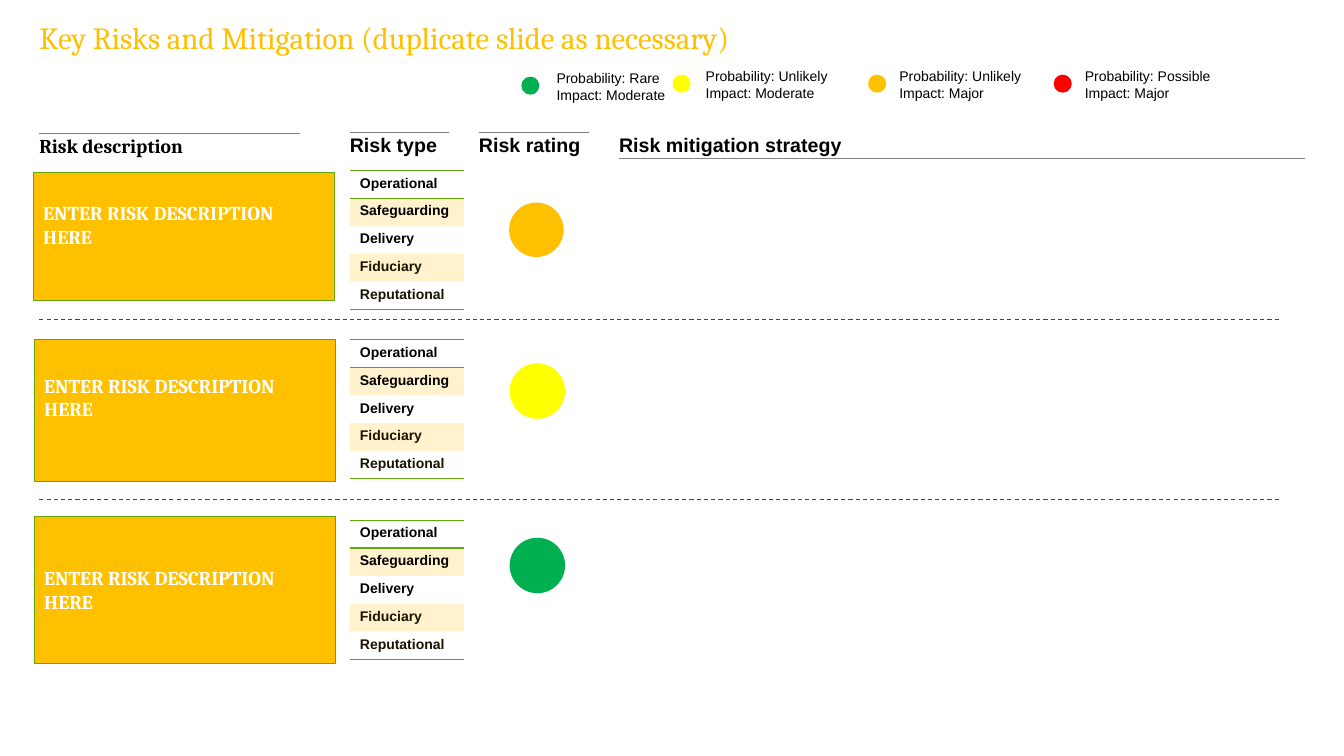
from lxml import etree
from pptx import Presentation
from pptx.dml.color import RGBColor
from pptx.enum.dml import MSO_LINE
from pptx.enum.shapes import MSO_CONNECTOR, MSO_SHAPE
from pptx.enum.text import MSO_ANCHOR, PP_ALIGN
from pptx.oxml.ns import qn
from pptx.util import Emu, Pt

STRAIGHT = MSO_CONNECTOR.STRAIGHT
RECT, OVAL = MSO_SHAPE.RECTANGLE, MSO_SHAPE.OVAL
TOP, MIDDLE, BOTTOM = MSO_ANCHOR.TOP, MSO_ANCHOR.MIDDLE, MSO_ANCHOR.BOTTOM
LEFT, DASH = PP_ALIGN.LEFT, MSO_LINE.DASH

AMBER = RGBColor(0xFF, 0xC0, 0x00)
YELLOW = RGBColor(0xFF, 0xFF, 0x00)
GREEN = RGBColor(0x00, 0xB0, 0x50)
RED = RGBColor(0xFF, 0x00, 0x00)
LEAF = RGBColor(0x64, 0xA7, 0x0B)
WINE = RGBColor(0xBA, 0x0C, 0x2F)
GREY = RGBColor(0x80, 0x80, 0x80)
BLACK = RGBColor(0x00, 0x00, 0x00)
BROWN = RGBColor(0x19, 0x13, 0x00)
WHITE = RGBColor(0xFF, 0xFF, 0xFF)

NO_STYLE = "{2D5ABB26-0587-4C30-8999-92F81FD0307C}"
PX = 9144  # EMU in one px, 100 px to the inch

TITLE = "Key Risks and Mitigation (duplicate slide as necessary)"
PROMPT = "ENTER RISK DESCRIPTION HERE"

# dot left, dot top, colour, label left, label lines
LEGEND = [
    (517, 76, GREEN, 552, ["Probability: Rare", "Impact: Moderate"]),
    (667, 74, YELLOW, 700, ["Probability: Unlikely", "Impact: Moderate"]),
    (861, 74, AMBER, 892, ["Probability: Unlikely", "Impact: Major"]),
    (1045, 74, RED, 1076, ["Probability: Possible", "Impact: Major"]),
]

# text, font, left, top, width, height, rule width, rule y
HEADERS = [
    ("Risk description", "Cambria", 39, 132, 257, 26, 259, 132),
    ("Risk type", "Arial", 347, 131, 100, 26, 98, 131),
    ("Risk rating", "Arial", 475, 131, 111, 26, 109, 131),
    ("Risk mitigation strategy", "Arial", 614, 132, 680, 25, 680, 157),
]

# box (left, top, height, bottom inset), table top, dot (left, top, fill, edge)
RISKS = [
    ((33, 171, 127, 28), 169, (505, 201, AMBER, None)),
    ((34, 337, 141, 32), 337, (506, 361, YELLOW, YELLOW)),
    ((34, 512, 146, 5), 516, (506, 534, GREEN, GREEN)),
]
DIVIDERS = [317, 496]

# type, text colour, tinted, sides with a border
TYPES = [
    ("Operational", BLACK, False, ["lnT", "lnB"]),
    ("Safeguarding", BLACK, True, []),
    ("Delivery", BLACK, False, []),
    ("Fiduciary", BROWN, True, []),
    ("Reputational", BROWN, False, ["lnB"]),
]


def px(*sizes):
    return [Emu(size * PX) for size in sizes]


def write(shape, lines, font, size, colour, bold=False, anchor=TOP,
          inset=(0, 0, 0, 0)):
    frame = shape.text_frame
    frame.word_wrap = True
    frame.vertical_anchor = anchor
    (frame.margin_left, frame.margin_top,
     frame.margin_right, frame.margin_bottom) = px(*inset)
    frame.text = "\n".join(lines)
    for para in frame.paragraphs:
        style(para, font, size, colour, bold)


def style(para, font, size, colour, bold):
    para.alignment = LEFT
    para.font.name = font
    para.font.size = Pt(size)
    para.font.bold = bold
    para.font.color.rgb = colour


def add_shape(kind, box, fill, edge=None):
    shape = slide.shapes.add_shape(kind, *px(*box))
    shape.shadow.inherit = False
    shape.fill.solid()
    shape.fill.fore_color.rgb = fill
    if edge is None:
        shape.line.fill.background()
    else:
        shape.line.color.rgb = edge
        shape.line.width = Pt(0.75)
    return shape


def add_rule(left, right, y, colour, dash=None):
    rule = slide.shapes.add_connector(STRAIGHT, *px(left, y, right, y))
    rule.line.color.rgb = colour
    rule.line.width = Pt(0.75)
    if dash:
        rule.line.dash_style = dash
    etree.SubElement(rule._element.spPr, qn("a:effectLst"))


def add_edge(cell, side):
    """Draw a 1 pt border; borders must come before the cell's fill."""
    edge = etree.SubElement(cell._tc.get_or_add_tcPr(), qn("a:" + side), w="12700")
    fill = etree.SubElement(edge, qn("a:solidFill"))
    etree.SubElement(fill, qn("a:srgbClr"), val=str(LEAF))


def add_types(top):
    frame = slide.shapes.add_table(len(TYPES), 1, *px(347, top, 113, 138))
    table = frame.table
    table.first_row = table.horz_banding = False
    table._tbl.tblPr.find(qn("a:tableStyleId")).text = NO_STYLE
    for row, (name, colour, tinted, sides) in enumerate(TYPES):
        cell = table.cell(row, 0)
        cell.text = name
        (cell.margin_left, cell.margin_top,
         cell.margin_right, cell.margin_bottom) = px(10, 5, 10, 5)
        style(cell.text_frame.paragraphs[0], "Arial", 10, colour, True)
        for side in sides:
            add_edge(cell, side)
        if tinted:
            cell.fill.solid()
            cell.fill.fore_color.rgb = AMBER
            tint = cell._tc.tcPr.find(qn("a:solidFill"))[0]
            etree.SubElement(tint, qn("a:alpha"), val="20000")
        else:
            cell.fill.background()


deck = Presentation()
deck.slide_width, deck.slide_height = px(1333, 750)
slide = deck.slides.add_slide(deck.slide_layouts[5])

title = slide.shapes.title
title.left, title.top, title.width, title.height = px(39, 19, 1057, 37)
write(title, [TITLE], "Cambria", 22, AMBER)

for left, top, colour, start, lines in LEGEND:
    add_shape(OVAL, (left, top, 18, 18), colour)
    label = slide.shapes.add_textbox(*px(start, top - 7, 147, 34))
    write(label, lines, "Arial", 10, BLACK)

for text, font, left, top, width, height, span, y in HEADERS:
    add_rule(left, left + span, y, GREY)
    head = slide.shapes.add_textbox(*px(left, top, width, height))
    write(head, [text], font, 14, BLACK, True, BOTTOM, (0, 0, 0, 2))

for (left, top, height, foot), start, (x, y, fill, edge) in RISKS:
    box = add_shape(RECT, (left, top, 299, height), AMBER, LEAF)
    write(box, [PROMPT], "Cambria", 14, WHITE, True, MIDDLE, (10, 5, 10, foot))
    add_types(start)
    add_shape(OVAL, (x, y, 54, 54), fill, edge)

for y in DIVIDERS:
    add_rule(39, 1270, y, WINE, DASH)

deck.save("out.pptx")
